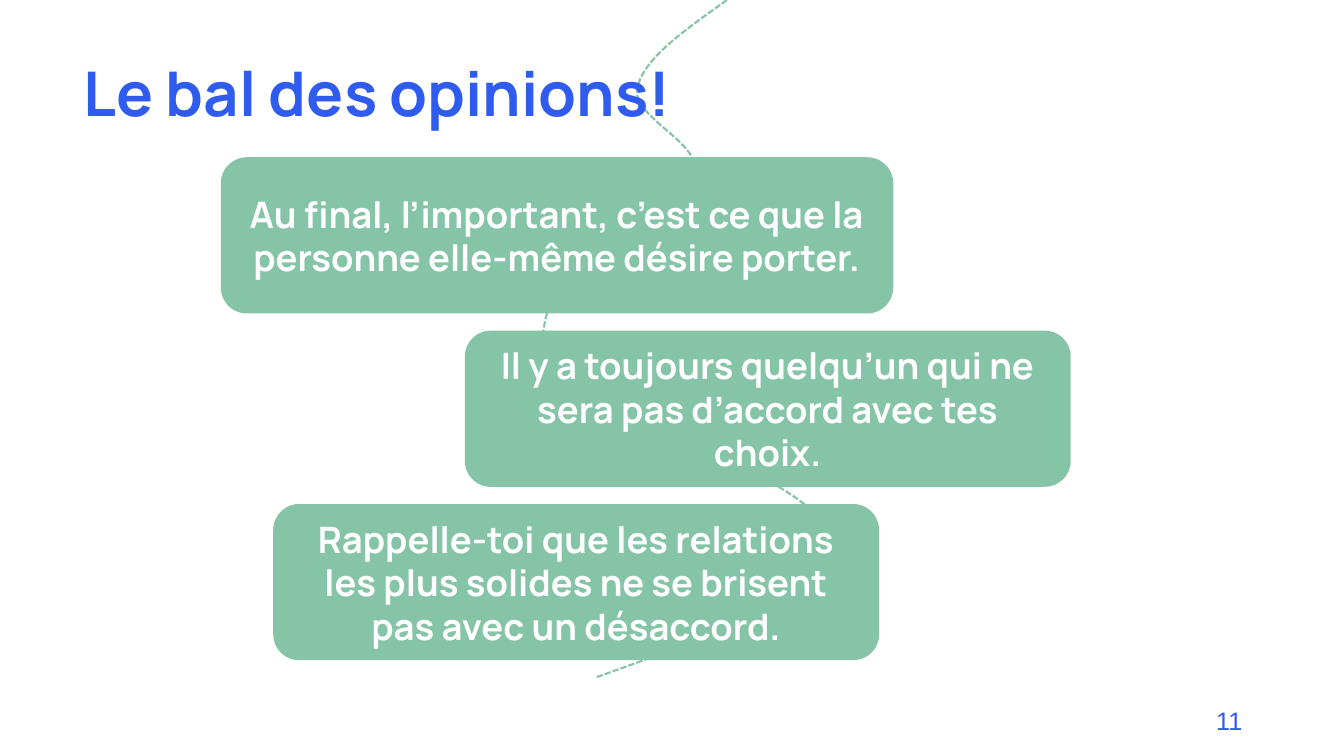
from dataclasses import dataclass
from typing import NamedTuple

from pptx import Presentation
from pptx.dml.color import RGBColor
from pptx.enum.dml import MSO_LINE
from pptx.enum.shapes import MSO_SHAPE
from pptx.enum.text import MSO_ANCHOR, MSO_AUTO_SIZE, PP_ALIGN
from pptx.slide import Slide
from pptx.text.text import _Paragraph as Paragraph
from pptx.util import Pt

EMU_PER_PX = 9144  # 100 px to the inch


@dataclass(frozen=True)
class Theme:
    blue: RGBColor = RGBColor(0x2F, 0x5C, 0xEE)
    green: RGBColor = RGBColor(0x86, 0xC4, 0xA7)
    white: RGBColor = RGBColor(0xFF, 0xFF, 0xFF)
    text_font: str = "Manrope"
    number_font: str = "Arial"
    title_size: int = 44
    card_size: int = 26
    number_size: int = 18
    path_width: float = 1.5


class Point(NamedTuple):
    x: int
    y: int


class Curve(NamedTuple):
    first_control: Point
    second_control: Point
    end: Point


@dataclass(frozen=True)
class Card:
    left: int
    width: int
    text: str


THEME = Theme()

CARD_TOP, CARD_HEIGHT, CARD_STEP = 156, 155, 172
CARDS = [
    Card(219, 667, "Au final, l’important, c’est ce que la personne elle-même désire porter."),
    Card(461, 601, "Il y a toujours quelqu’un qui ne sera pas d’accord avec tes choix."),
    Card(271, 601, "Rappelle-toi que les relations les plus solides ne se brisent pas avec un désaccord."),
]

PATH_START = Point(721, 0)
PATH_CURVES = [
    Curve(Point(679, 30), Point(637, 59), Point(632, 88)),
    Curve(Point(626, 116), Point(698, 143), Point(688, 171)),
    Curve(Point(677, 199), Point(593, 220), Point(569, 254)),
    Curve(Point(545, 287), Point(528, 342), Point(545, 371)),
    Curve(Point(562, 401), Point(627, 406), Point(671, 430)),
    Curve(Point(716, 454), Point(795, 488), Point(812, 515)),
    Curve(Point(830, 543), Point(811, 568), Point(774, 594)),
    Curve(Point(737, 620), Point(664, 646), Point(591, 672)),
]
STEPS_PER_CURVE = 16


def px(length: int) -> int:
    return length * EMU_PER_PX


def format_runs(para: Paragraph, font: str, size: int, color: RGBColor, bold: bool) -> None:
    for span in para.runs:
        span.font.name = font
        span.font.size = Pt(size)
        span.font.color.rgb = color
        span.font.bold = bold


def curve_points(start: Point, curve: Curve) -> list[tuple[float, float]]:
    """Points along one cubic curve, in EMU, without its start."""
    points = []
    for step in range(1, STEPS_PER_CURVE + 1):
        t = step / STEPS_PER_CURVE
        weights = ((1 - t) ** 3, 3 * t * (1 - t) ** 2, 3 * t**2 * (1 - t), t**3)
        corners = (start, *curve)
        points.append((
            sum(weight * px(corner.x) for weight, corner in zip(weights, corners)),
            sum(weight * px(corner.y) for weight, corner in zip(weights, corners)),
        ))
    return points


def draw_path(page: Slide) -> None:
    builder = page.shapes.build_freeform(px(PATH_START.x), px(PATH_START.y))
    start = PATH_START
    for curve in PATH_CURVES:
        builder.add_line_segments(curve_points(start, curve), close=False)
        start = curve.end
    path_line = builder.convert_to_shape()
    path_line.shadow.inherit = False
    path_line.fill.background()
    path_line.line.color.rgb = THEME.green
    path_line.line.width = Pt(THEME.path_width)
    path_line.line.dash_style = MSO_LINE.SQUARE_DOT


def draw_card(page: Slide, card: Card, top: int) -> None:
    box = page.shapes.add_shape(
        MSO_SHAPE.ROUNDED_RECTANGLE, px(card.left), px(top), px(card.width), px(CARD_HEIGHT)
    )
    box.shadow.inherit = False
    box.fill.solid()
    box.fill.fore_color.rgb = THEME.green
    box.line.fill.background()
    frame = box.text_frame
    frame.text = card.text
    frame.word_wrap = True
    frame.vertical_anchor = MSO_ANCHOR.MIDDLE
    para = frame.paragraphs[0]
    para.alignment = PP_ALIGN.CENTER
    format_runs(para, THEME.text_font, THEME.card_size, THEME.white, True)


def draw_page_number(page: Slide, number: str) -> None:
    box = page.shapes.add_textbox(px(942), px(695), px(300), px(40))
    frame = box.text_frame
    frame.text = number
    frame.word_wrap = True
    para = frame.paragraphs[0]
    para.alignment = PP_ALIGN.RIGHT
    format_runs(para, THEME.number_font, THEME.number_size, THEME.blue, False)


def fill_title(page: Slide, text: str) -> None:
    title = page.shapes.title
    title.left, title.top, title.width, title.height = px(51), px(23), px(1150), px(145)
    frame = title.text_frame
    frame.text = text
    frame.word_wrap = True
    frame.auto_size = MSO_AUTO_SIZE.NONE
    frame.vertical_anchor = MSO_ANCHOR.MIDDLE
    frame.margin_left = px(32)
    para = frame.paragraphs[0]
    para.alignment = PP_ALIGN.LEFT
    para.line_spacing = 0.9
    format_runs(para, THEME.text_font, THEME.title_size, THEME.blue, True)
    # Bring the title in front of the path
    title.element.getparent().append(title.element)


def main() -> None:
    deck = Presentation()
    deck.slide_width, deck.slide_height = px(1333), px(750)
    page = deck.slides.add_slide(deck.slide_layouts[5])

    # Winding path behind everything
    draw_path(page)
    draw_page_number(page, "11")

    # Opinion cards, evenly stacked
    for index, card in enumerate(CARDS):
        draw_card(page, card, CARD_TOP + index * CARD_STEP)

    fill_title(page, "Le bal des opinions!")
    deck.save("out.pptx")


if __name__ == "__main__":
    main()
